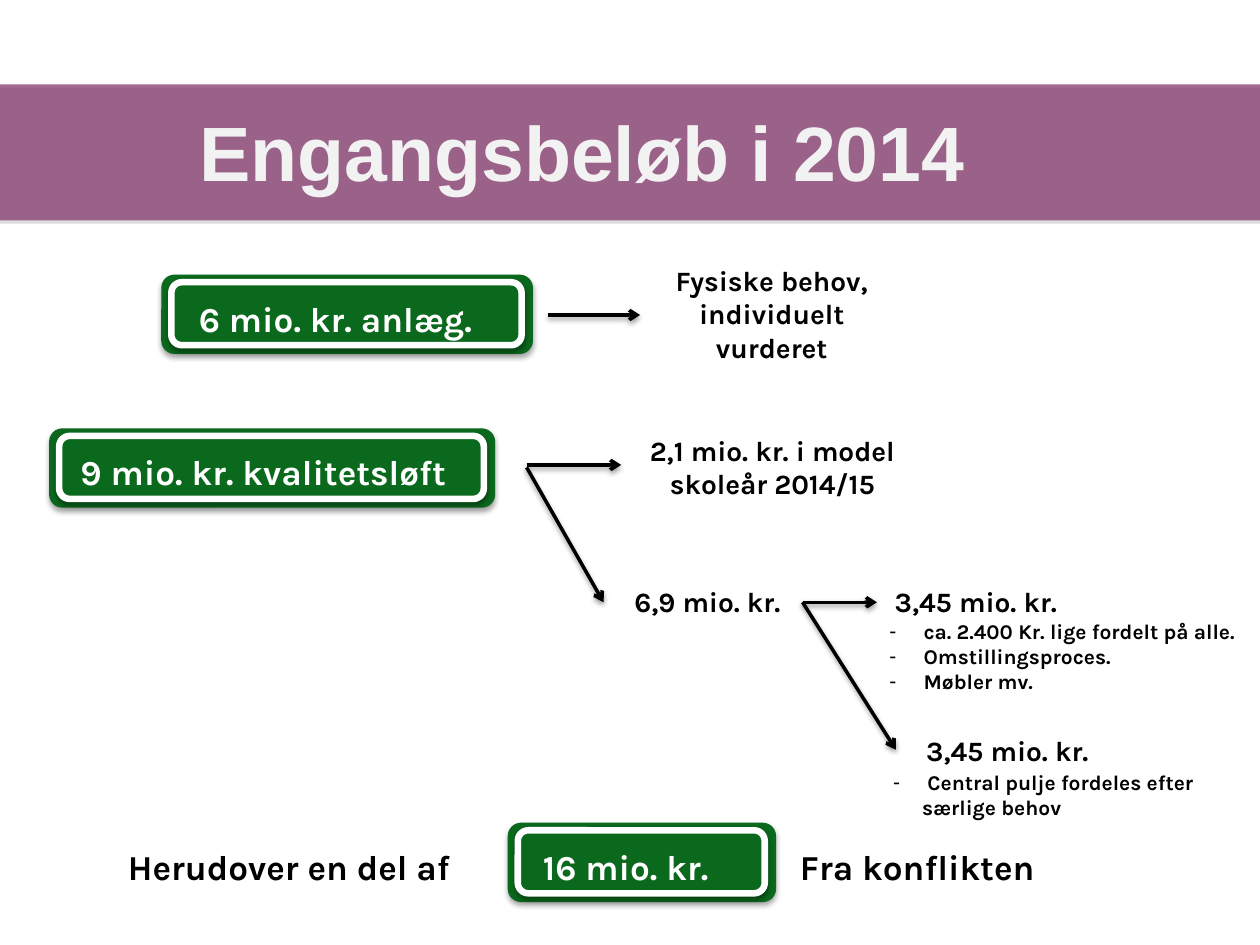
from typing import NamedTuple

from lxml.etree import SubElement
from pptx import Presentation
from pptx.dml.color import RGBColor
from pptx.enum.shapes import MSO_CONNECTOR, MSO_SHAPE
from pptx.enum.text import MSO_ANCHOR, MSO_AUTO_SIZE, PP_ALIGN
from pptx.oxml.ns import qn
from pptx.util import Emu, Inches, Pt

COLUMNS, ROWS = 100, 75
SLIDE_WIDTH, SLIDE_HEIGHT = Inches(10), Inches(7.5)
FONT = "Karla"
BLACK, WHITE, GREEN, PURPLE = "000000", "FFFFFF", "0B691D", "863A6D"


class Box(NamedTuple):
    left: float
    top: float
    width: float
    height: float


class Label(NamedTuple):
    box: Box
    lines: list[str]
    size: int = 16
    color: str = BLACK
    alignment: PP_ALIGN = PP_ALIGN.CENTER
    bulleted: bool = False


class Sign(NamedTuple):
    left: float
    top: float
    width: float
    text: str
    text_left: float
    text_width: float


class Arrow(NamedTuple):
    start: tuple[float, float]
    end: tuple[float, float]


class Shadow(NamedTuple):
    color: str
    opacity: int
    blur: float
    distance: float


BAND_SHADOW = Shadow("808080", 35, 0, 1.8)
SIGN_SHADOW = Shadow(BLACK, 35, 3.1, 1.8)
ARROW_SHADOW = Shadow(BLACK, 38, 3.1, 1.6)

SIGNS = [
    Sign(12.8, 21.8, 29.5, "6 mio. kr. anlæg.", 14.8, 26.8),
    Sign(3.9, 34, 35.4, "9 mio. kr. kvalitetsløft", 5.4, 34.6),
    Sign(40.3, 65.3, 21.3, "16 mio. kr.", 42.1, 20.1),
]
LEFT = PP_ALIGN.LEFT
LABELS = [
    Label(Box(52.2, 20.4, 18.1, 9.1), ["Fysiske behov, individuelt vurderet"]),
    Label(Box(47.9, 33.9, 26.8, 6.4), ["2,1 mio. kr. i model skoleår 2014/15"]),
    Label(Box(47.9, 45.9, 16.5, 3.7), ["6,9 mio. kr."]),
    Label(Box(67.4, 45.9, 20.1, 3.7), ["3,45 mio. kr."]),
    Label(Box(69.9, 57.7, 20.1, 3.7), ["3,45 mio. kr."]),
    Label(Box(69.6, 48.6, 32.4, 7.1),
          [" ca. 2.400 Kr. lige fordelt på alle.", " Omstillingsproces.", " Møbler mv."],
          12, BLACK, LEFT, True),
    Label(Box(69.9, 60.6, 26.4, 5), [" Central pulje fordeles efter særlige behov"],
          12, BLACK, LEFT, True),
    Label(Box(7.3, 66.6, 32, 4.4), ["Herudover en del af "], 20),
    Label(Box(60.9, 66.6, 23.8, 4.4), ["Fra konflikten"], 20),
]
ARROWS = [
    Arrow((43.5, 25), (50.8, 25)),
    Arrow((41.8, 36.9), (49.3, 36.9)),
    Arrow((41.8, 37.1), (47.9, 47.8)),
    Arrow((63.7, 47.8), (69.6, 47.8)),
    Arrow((63.7, 47.8), (71.1, 59.5)),
]


def rgb(color: str) -> RGBColor:
    return RGBColor.from_string(color)


def across(columns: float) -> Emu:
    return Emu(round(SLIDE_WIDTH * columns / COLUMNS))


def down(rows: float) -> Emu:
    return Emu(round(SLIDE_HEIGHT * rows / ROWS))


def place(box: Box) -> tuple[Emu, Emu, Emu, Emu]:
    return across(box.left), down(box.top), across(box.width), down(box.height)


def apply(target, values: dict) -> None:
    for name, value in values.items():
        setattr(target, name, value)


def set_opacity(color_element, percent: int) -> None:
    SubElement(color_element, qn("a:alpha")).set("val", str(percent * 1000))


def add_shadow(shape, shadow: Shadow) -> None:
    """Cast a shadow straight down; call after fill and line are set."""
    properties = shape.element.spPr
    for effects in properties.findall(qn("a:effectLst")):
        properties.remove(effects)
    effects = SubElement(properties, qn("a:effectLst"))
    outer = SubElement(effects, qn("a:outerShdw"), {
        "blurRad": str(Pt(shadow.blur)), "dist": str(Pt(shadow.distance)),
        "dir": "5400000", "rotWithShape": "0"})
    set_opacity(SubElement(outer, qn("a:srgbClr"), val=shadow.color), shadow.opacity)


def add_filled_shape(slide, kind: MSO_SHAPE, box: Box, color: str, shadow: Shadow,
                     outline: str | None = None):
    shape = slide.shapes.add_shape(kind, *place(box))
    shape.fill.solid()
    shape.fill.fore_color.rgb = rgb(color)
    if outline:
        shape.line.color.rgb = rgb(outline)
        shape.line.width = Pt(3.75)
    else:
        shape.line.fill.background()
    add_shadow(shape, shadow)
    return shape


def add_dash_bullet(paragraph) -> None:
    properties = paragraph._p.get_or_add_pPr()
    indent = across(2.3)
    properties.set("marL", str(indent))
    properties.set("indent", str(-indent))
    SubElement(properties, qn("a:buFont"), typeface="Arial")
    SubElement(properties, qn("a:buChar"), char="-")


def add_label(slide, label: Label) -> None:
    frame = slide.shapes.add_textbox(*place(label.box)).text_frame
    apply(frame, {"word_wrap": True, "auto_size": MSO_AUTO_SIZE.SHAPE_TO_FIT_TEXT})
    frame.text = "\n".join(label.lines)
    for paragraph in frame.paragraphs:
        paragraph.alignment = label.alignment
        if label.bulleted:
            add_dash_bullet(paragraph)
        for run in paragraph.runs:
            apply(run.font, {"name": FONT, "size": Pt(label.size), "bold": True})
            run.font.color.rgb = rgb(label.color)


def add_sign(slide, sign: Sign) -> None:
    outer = Box(sign.left, sign.top, sign.width, 6.3)
    inner = Box(sign.left + 0.8, sign.top + 0.6, sign.width - 1.7, 5)
    add_filled_shape(slide, MSO_SHAPE.ROUNDED_RECTANGLE, outer, GREEN, SIGN_SHADOW)
    add_filled_shape(slide, MSO_SHAPE.ROUNDED_RECTANGLE, inner, GREEN, SIGN_SHADOW, WHITE)
    text_box = Box(sign.text_left, sign.top + 1.3, sign.text_width, 4.4)
    add_label(slide, Label(text_box, [sign.text], 20, WHITE, LEFT))


def add_arrow(slide, arrow: Arrow) -> None:
    (x1, y1), (x2, y2) = arrow
    connector = slide.shapes.add_connector(
        MSO_CONNECTOR.STRAIGHT, across(x1), down(y1), across(x2), down(y2))
    connector.line.color.rgb = rgb(BLACK)
    connector.line.width = Pt(2)
    SubElement(connector.line._get_or_add_ln(), qn("a:tailEnd"), type="arrow")
    add_shadow(connector, ARROW_SHADOW)


def add_title(slide, text: str) -> None:
    title = slide.shapes.title
    band = add_filled_shape(slide, MSO_SHAPE.RECTANGLE, Box(0, 6.7, COLUMNS, 10.8),
                            PURPLE, BAND_SHADOW)
    set_opacity(band.element.spPr.find(qn("a:solidFill"))[0], 75)
    title.element.addprevious(band.element)
    left, top, width, height = place(Box(5, 9.2, 82.5, 5.5))
    apply(title, {"left": left, "top": top, "width": width, "height": height})
    frame = title.text_frame
    apply(frame, {"text": text, "word_wrap": True, "auto_size": MSO_AUTO_SIZE.NONE,
                  "vertical_anchor": MSO_ANCHOR.MIDDLE})
    paragraph = frame.paragraphs[0]
    paragraph.alignment = PP_ALIGN.CENTER
    font = paragraph.runs[0].font
    apply(font, {"name": "Arial", "size": Pt(44), "bold": True})
    font.color.rgb = rgb("F2F2F2")


def main() -> None:
    presentation = Presentation()
    apply(presentation, {"slide_width": SLIDE_WIDTH, "slide_height": SLIDE_HEIGHT})
    slide = presentation.slides.add_slide(presentation.slide_layouts[5])
    add_title(slide, "Engangsbeløb i 2014")
    for draw, items in ((add_arrow, ARROWS), (add_label, LABELS), (add_sign, SIGNS)):
        for item in items:
            draw(slide, item)
    presentation.save("out.pptx")


if __name__ == "__main__":
    main()
